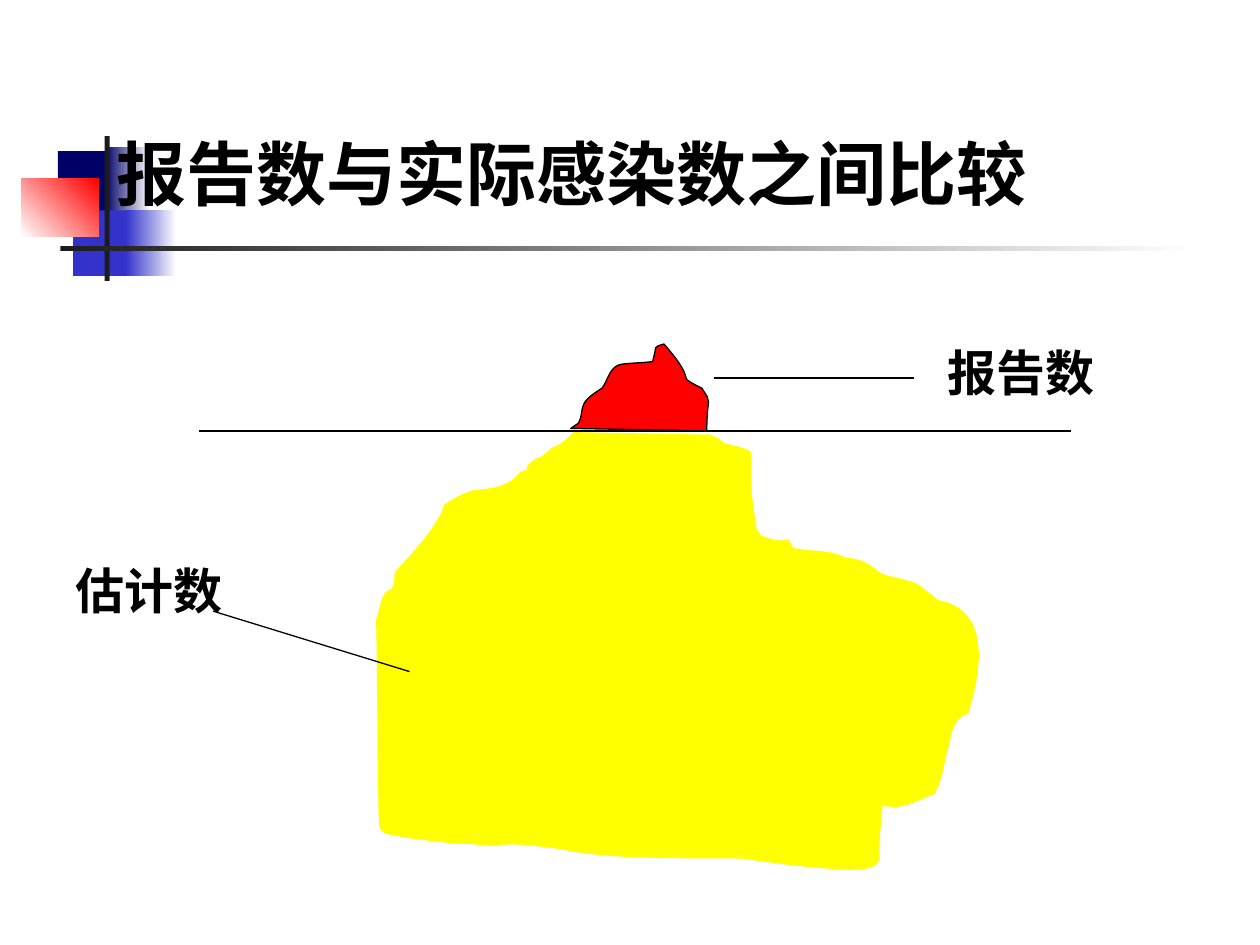
import pptx
import pptx.dml.color
import pptx.enum.shapes
import pptx.enum.text
import pptx.oxml
import pptx.util
from pptx.oxml.ns import qn
from pptx.util import Inches

COLORS = {
    "navy": "000066", "blue": "3333CC", "red": "FF0000", "yellow": "FFFF00",
    "dark": "1C1C1C", "black": "000000", "white": "FFFFFF",
}

# Each outline is a start point and cubic curves (two controls, then an end).
ESTIMATED_START = (4.56, 1.43)
ESTIMATED_CURVES = [
    (4.5, 1.49, 4.46, 1.53, 4.38, 1.56), (4.36, 1.58, 4.34, 1.6, 4.31, 1.62),
    (4.29, 1.64, 4.25, 1.64, 4.23, 1.66), (4.11, 1.77, 4.28, 1.7, 4.13, 1.75),
    (4.04, 1.88, 3.88, 1.88, 3.74, 1.9), (3.66, 1.93, 3.6, 1.96, 3.53, 2.01),
    (3.49, 2.12, 3.52, 2.05, 3.43, 2.2), (3.35, 2.32, 3.14, 2.54, 3.14, 2.54),
    (3.13, 2.58, 3.14, 2.63, 3.12, 2.66), (3.11, 2.69, 3.07, 2.69, 3.06, 2.71),
    (3.03, 2.74, 3.01, 2.87, 2.99, 2.92), (3, 3.44, 3, 3.95, 3.01, 4.47),
    (3.02, 4.52, 3, 4.57, 3.04, 4.6), (3.09, 4.64, 3.61, 4.69, 3.61, 4.69),
    (3.71, 4.69, 3.81, 4.7, 3.9, 4.71), (4.09, 4.68, 4.23, 4.71, 4.42, 4.73),
    (4.9, 4.83, 5.42, 4.8, 5.9, 4.81), (6.24, 4.86, 6.39, 4.88, 6.75, 4.9),
    (6.82, 4.89, 6.9, 4.9, 6.95, 4.86), (6.99, 4.83, 6.97, 4.77, 6.97, 4.73),
    (6.98, 4.61, 6.99, 4.5, 7, 4.39), (7.19, 4.42, 7.22, 4.37, 7.41, 4.3),
    (7.47, 4.21, 7.48, 4.09, 7.51, 3.98), (7.55, 3.84, 7.54, 3.71, 7.68, 3.66),
    (7.8, 3.28, 7.84, 2.84, 7.45, 2.77), (7.39, 2.73, 7.34, 2.68, 7.28, 2.64),
    (7.19, 2.6, 7.09, 2.59, 7, 2.56), (6.87, 2.47, 6.87, 2.45, 6.71, 2.43),
    (6.57, 2.36, 6.43, 2.39, 6.29, 2.35), (6.2, 2.2, 6.32, 2.36, 6.05, 2.26),
    (6.02, 2.25, 6.02, 2.22, 6, 2.2), (5.97, 1.99, 5.94, 1.85, 5.96, 1.64),
    (5.96, 1.62, 5.96, 1.59, 5.94, 1.58), (5.91, 1.56, 5.78, 1.53, 5.74, 1.52),
    (5.72, 1.5, 5.7, 1.48, 5.67, 1.47), (5.65, 1.46, 5.61, 1.45, 5.61, 1.45),
]
REPORTED_START = (4.53, 1.4)
REPORTED_CURVES = [
    (4.55, 1.38, 4.57, 1.38, 4.59, 1.36), (4.63, 1.3, 4.6, 1.22, 4.67, 1.16),
    (4.7, 1.13, 4.78, 1.08, 4.78, 1.08), (4.83, 1.01, 4.84, 0.9, 4.94, 0.89),
    (5.02, 0.88, 5.1, 0.88, 5.18, 0.87), (5.22, 0.73, 5.18, 0.76, 5.27, 0.73),
    (5.33, 0.8, 5.39, 0.87, 5.43, 0.95), (5.44, 0.97, 5.44, 0.99, 5.45, 1.01),
    (5.48, 1.04, 5.57, 1.08, 5.57, 1.08), (5.66, 1.22, 5.61, 1.12, 5.61, 1.42),
]


def rgb(name):
    return pptx.dml.color.RGBColor.from_string(COLORS[name])


def add_text(page, text, left, top, width, height, *, font, size,
             anchor=pptx.enum.text.MSO_ANCHOR.TOP, grow=False):
    box = page.shapes.add_textbox(
        Inches(left), Inches(top), Inches(width), Inches(height))
    frame = box.text_frame
    frame.word_wrap = True
    frame.vertical_anchor = anchor
    if grow:
        frame.auto_size = pptx.enum.text.MSO_AUTO_SIZE.SHAPE_TO_FIT_TEXT
    span = frame.paragraphs[0].add_run()
    span.text = text
    span.font.name = font
    span.font.size = pptx.util.Pt(size)
    span.font.bold = True
    span.font.color.rgb = rgb("black")


def add_block(page, left, top, width, height, colors, angle=0):
    """Add a rectangle with one solid colour or a two-colour gradient."""
    block = page.shapes.add_shape(
        pptx.enum.shapes.MSO_SHAPE.RECTANGLE,
        Inches(left), Inches(top), Inches(width), Inches(height))
    block.shadow.inherit = False
    block.line.fill.background()
    if len(colors) == 1:
        block.fill.solid()
        block.fill.fore_color.rgb = rgb(colors[0])
    else:
        block.fill.gradient()
        block.fill.gradient_angle = angle
        for stop, color in zip(block.fill.gradient_stops, colors):
            stop.color.rgb = rgb(color)


def add_line(page, x1, y1, x2, y2):
    line = page.shapes.add_connector(
        pptx.enum.shapes.MSO_CONNECTOR.STRAIGHT,
        Inches(x1), Inches(y1), Inches(x2), Inches(y2))
    line.line.color.rgb = rgb("black")
    line.line.width = pptx.util.Pt(0.75)
    properties = line._element.spPr
    properties.append(properties.makeelement(qn("a:effectLst"), {}))


def bend_segments(outline):
    """Turn every three straight segments into one cubic curve."""
    segments = list(outline._element.iter(qn("a:lnTo")))
    for first in range(0, len(segments) - 2, 3):
        group = segments[first:first + 3]
        curve = group[0].makeelement(qn("a:cubicBezTo"), {})
        group[0].addprevious(curve)
        for segment in group:
            curve.append(segment[0])
            segment.getparent().remove(segment)


def add_outline(page, left, top, start, curves, fill, line, closed=False):
    points = [start]
    for curve in curves:
        points += zip(curve[::2], curve[1::2])
    if closed:
        points.append(start)
    points = [(Inches(left + x), Inches(top + y)) for x, y in points]
    builder = page.shapes.build_freeform(*points[0])
    builder.add_line_segments(points[1:], close=closed)
    outline = builder.convert_to_shape()
    bend_segments(outline)
    outline.shadow.inherit = False
    outline.fill.solid()
    outline.fill.fore_color.rgb = rgb(fill)
    outline.line.color.rgb = rgb(line)
    outline.line.width = pptx.util.Pt(0.75)


def add_header(page, left, top):
    for x, y, width, height, colors, angle in [
        (0.46, 0.3, 0.48, 0.52, ["navy"], 0),
        (0.83, 0.27, 0.36, 0.52, ["navy", "white"], 0),
        (0.58, 0.77, 0.46, 0.52, ["blue"], 0),
        (1, 0.77, 0.4, 0.52, ["blue", "white"], 0),
        (0.17, 0.52, 0.61, 0.46, ["white", "red"], 45),
        (0.83, 0.18, 0.04, 1.15, ["dark"], 0),
        (0.48, 1.05, 9, 0.04, ["dark", "white"], 0),
    ]:
        add_block(page, left + x, top + y, width, height, colors, angle)
    add_text(page, "报告数与实际感染数之间比较", left + 0.83, top + 0.02, 9.17, 0.83,
             font="Karla", size=40, anchor=pptx.enum.text.MSO_ANCHOR.BOTTOM)


def add_iceberg(page, left, top):
    label = {"font": "Times New Roman", "size": 28, "grow": True}
    add_line(page, left + 1.58, top + 1.42, left + 8.5, top + 1.42)
    add_outline(page, left, top, ESTIMATED_START, ESTIMATED_CURVES, "yellow", "yellow")
    add_line(page, left + 5.67, top + 1, left + 7.25, top + 1)
    add_text(page, "报告数", left + 7.42, top + 0.67, 1.5, 0.57, **label)
    add_line(page, left + 3.25, top + 3.33, left + 1.69, top + 2.85)
    add_text(page, "估计数", left + 0.5, top + 2.4, 1.75, 0.57, **label)
    add_outline(page, left, top, REPORTED_START, REPORTED_CURVES, "red", "black",
                closed=True)


def main():
    deck = pptx.Presentation()
    deck.slide_width = Inches(10)
    deck.slide_height = Inches(7.5)
    page = deck.slides.add_slide(deck.slide_layouts[6])
    add_header(page, left=0, top=0.9)
    add_iceberg(page, left=0, top=2)
    deck.save("out.pptx")


if __name__ == "__main__":
    main()
